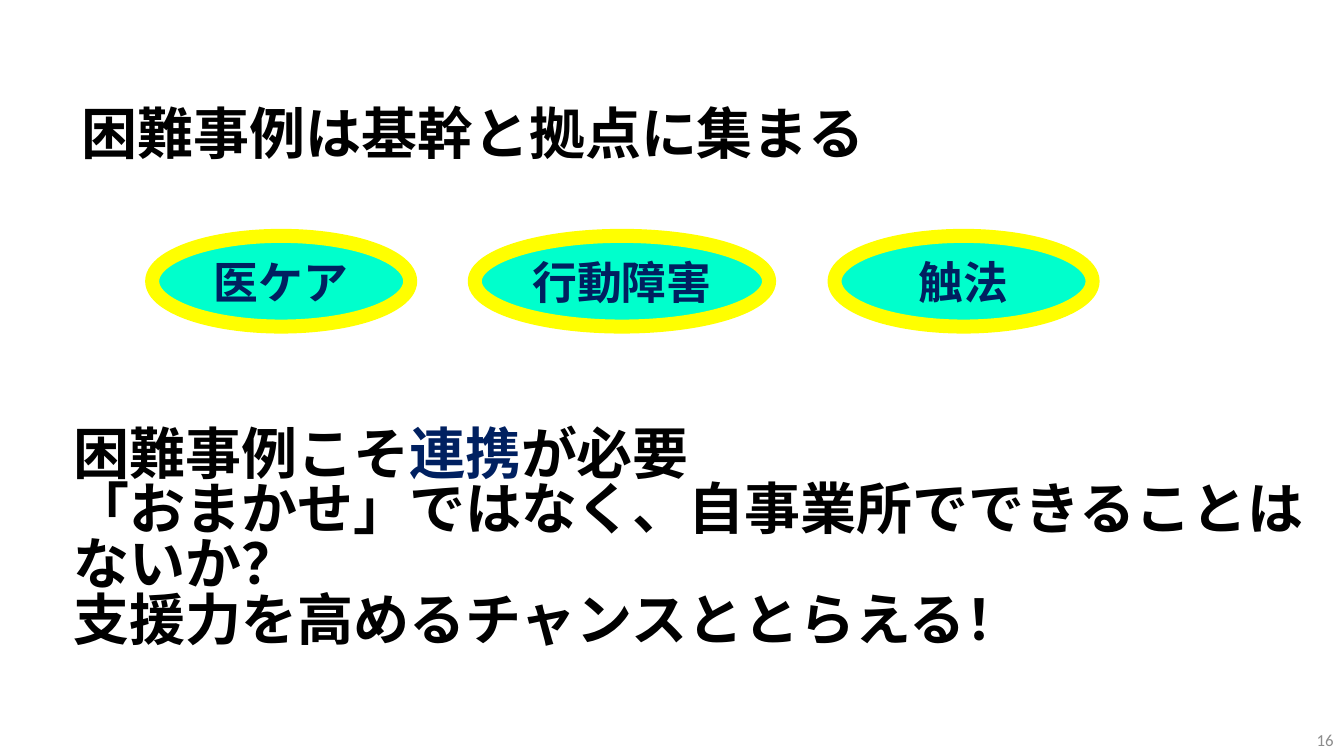
import pptx
import pptx.util
import pptx.dml.color
import pptx.enum.shapes
import pptx.enum.text
import pptx.oxml.ns
from lxml import etree

Pt = pptx.util.Pt
ALIGN = pptx.enum.text.PP_ALIGN
COLORS = {
    "text": "000000",
    "navy": "002060",
    "mint": "00FFCC",
    "yellow": "FFFF00",
    "gray": "8C8C8C",
}
JP_FONT = "Noto Sans CJK JP"
CASES = [("医ケア", 108.72, 184.32), ("行動障害", 339.12, 210.24), ("触法", 596.16, 184.32)]
MESSAGE = [
    [("困難事例こそ", "text"), ("連携", "navy"), ("が必要", "text")],
    [("「おまかせ」ではなく、自事業所でできることはないか？", "text")],
    [("支援力を高めるチャンスととらえる！", "text")],
]


def rgb(name):
    return pptx.dml.color.RGBColor.from_string(COLORS[name])


def format_run(r, size, color, font=JP_FONT, bold=True):
    r.font.size = Pt(size)
    r.font.bold = bold
    r.font.name = font
    r.font.color.rgb = rgb(color)
    ea = etree.SubElement(r.font._element, pptx.oxml.ns.qn("a:ea"))
    ea.set("typeface", font)


def set_frame(tf, margin=0):
    tf.word_wrap = True
    tf.auto_size = pptx.enum.text.MSO_AUTO_SIZE.NONE
    tf.vertical_anchor = pptx.enum.text.MSO_ANCHOR.MIDDLE
    tf.margin_left = tf.margin_right = Pt(margin)
    tf.margin_top = tf.margin_bottom = Pt(0)


def add_title(s, text):
    sp = s.shapes.title
    sp.left, sp.top, sp.width, sp.height = Pt(58.32), Pt(50.4), Pt(888.48), Pt(88.56)
    tf = sp.text_frame
    tf.text = text
    set_frame(tf)
    p = tf.paragraphs[0]
    p.alignment = ALIGN.LEFT
    format_run(p.runs[0], 40, "text")


def add_case(s, text, left, width):
    sp = s.shapes.add_shape(
        pptx.enum.shapes.MSO_SHAPE.OVAL, Pt(left), Pt(168.48), Pt(width), Pt(64.8))
    sp.shadow.inherit = False
    sp.fill.solid()
    sp.fill.fore_color.rgb = rgb("mint")
    sp.line.color.rgb = rgb("yellow")
    sp.line.width = Pt(10)
    tf = sp.text_frame
    tf.text = text
    set_frame(tf)
    p = tf.paragraphs[0]
    p.alignment = ALIGN.CENTER
    format_run(p.runs[0], 32, "navy")


def add_message(s, lines):
    sp = s.shapes.add_textbox(Pt(52.56), Pt(285.84), Pt(888.48), Pt(200.88))
    tf = sp.text_frame
    set_frame(tf)
    for i, line in enumerate(lines):
        p = tf.add_paragraph() if i else tf.paragraphs[0]
        p.line_spacing = 0.82
        for text, color in line:
            r = p.add_run()
            r.text = text
            format_run(r, 40, color)


def add_page_number(s, number):
    sp = s.shapes.add_textbox(Pt(743.76), Pt(514.08), Pt(216), Pt(28.8))
    tf = sp.text_frame
    tf.text = number
    set_frame(tf, 7.2)
    p = tf.paragraphs[0]
    p.alignment = ALIGN.RIGHT
    format_run(p.runs[0], 12, "gray", "Calibri", False)


def main():
    prs = pptx.Presentation()
    prs.slide_width, prs.slide_height = Pt(960), Pt(540)
    s = prs.slides.add_slide(prs.slide_layouts[5])
    add_page_number(s, "16")
    add_title(s, "困難事例は基幹と拠点に集まる")
    for text, left, width in CASES:
        add_case(s, text, left, width)
    add_message(s, MESSAGE)
    prs.save("out.pptx")


if __name__ == "__main__":
    main()
